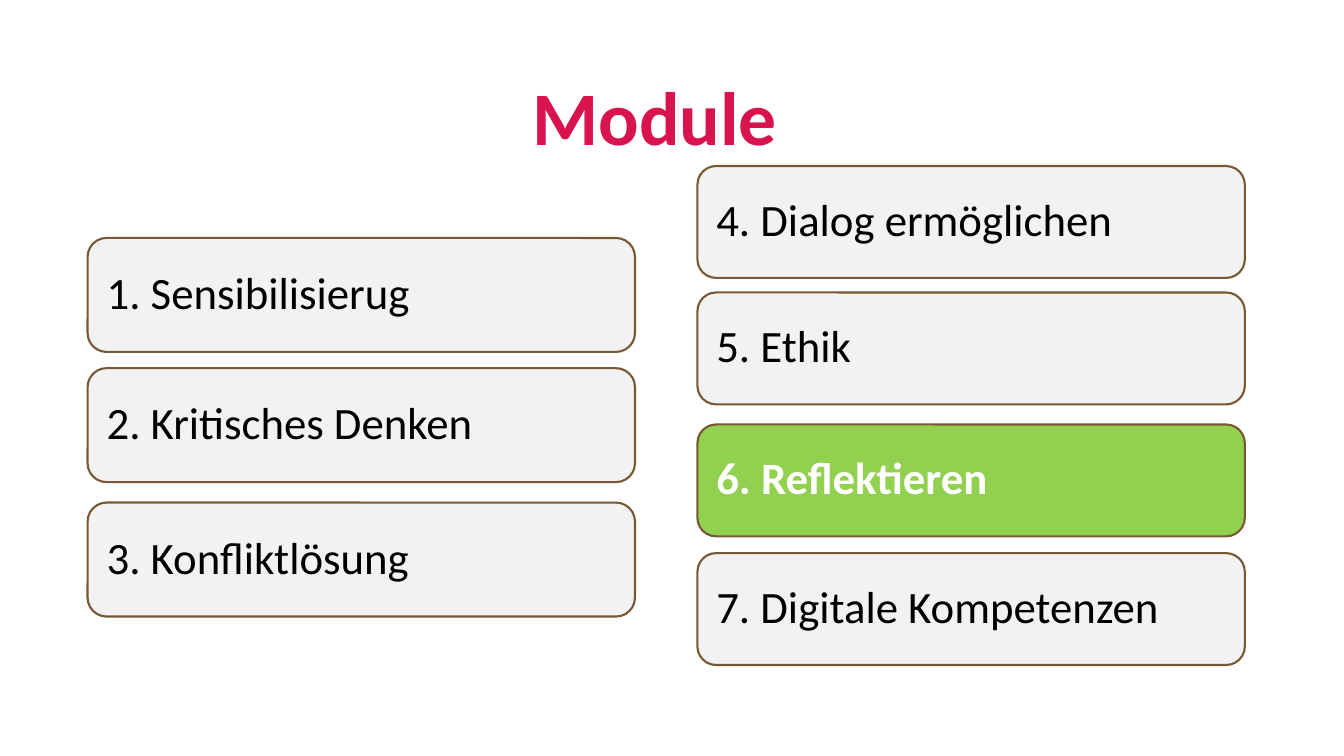
from dataclasses import dataclass

from pptx import Presentation
from pptx.dml.color import RGBColor
from pptx.enum.shapes import MSO_SHAPE
from pptx.enum.text import MSO_ANCHOR, PP_ALIGN
from pptx.util import Pt


@dataclass(frozen=True)
class Theme:
    font: str = "Calibri"
    title_size: int = 54
    module_size: int = 32
    line_width: float = 1.5
    line_spacing: float = 0.9
    inset: float = 9.6
    title: RGBColor = RGBColor(0xD8, 0x13, 0x4D)
    card: RGBColor = RGBColor(0xF2, 0xF2, 0xF2)
    active: RGBColor = RGBColor(0x92, 0xD0, 0x50)
    outline: RGBColor = RGBColor(0x78, 0x58, 0x32)
    text: RGBColor = RGBColor(0, 0, 0)
    active_text: RGBColor = RGBColor(0xFF, 0xFF, 0xFF)


THEME = Theme()
ACTIVE_MODULE = "6. Reflektieren"


def add_text(tf, text, size, color, bold, align, anchor):
    tf.word_wrap = True
    tf.vertical_anchor = anchor
    p = tf.paragraphs[0]
    p.alignment = align
    p.line_spacing = THEME.line_spacing
    r = p.add_run()
    r.text = text
    r.font.name = THEME.font
    r.font.size = Pt(size)
    r.font.bold = bold
    r.font.color.rgb = color


def add_title(s, text, left, top, width, height):
    sp = s.shapes.add_textbox(Pt(left), Pt(top), Pt(width), Pt(height))
    add_text(sp.text_frame, text, THEME.title_size, THEME.title, True,
             PP_ALIGN.CENTER, MSO_ANCHOR.BOTTOM)


def add_module(s, text, left, top, width, height):
    active = text == ACTIVE_MODULE
    sp = s.shapes.add_shape(MSO_SHAPE.ROUNDED_RECTANGLE,
                            Pt(left), Pt(top), Pt(width), Pt(height))
    sp.shadow.inherit = False
    sp.fill.solid()
    sp.fill.fore_color.rgb = THEME.active if active else THEME.card
    sp.line.color.rgb = THEME.outline
    sp.line.width = Pt(THEME.line_width)
    tf = sp.text_frame
    tf.margin_left = tf.margin_right = Pt(THEME.inset)
    tf.margin_top = tf.margin_bottom = Pt(THEME.inset)
    add_text(tf, text, THEME.module_size,
             THEME.active_text if active else THEME.text, active,
             PP_ALIGN.LEFT, MSO_ANCHOR.MIDDLE)


def add_module_column(s, modules, left, top, width, card_height):
    """Place each module at its offset below the top of the column."""
    for text, offset in modules:
        add_module(s, text, left, top + offset, width, card_height)


def main():
    prs = Presentation()
    prs.slide_width, prs.slide_height = Pt(960), Pt(540)
    s = prs.slides.add_slide(prs.slide_layouts[6])

    # Heading
    add_title(s, "Module", 0.7, -21.6, 934, 140.4)

    # Left column: modules 1 to 3
    add_module_column(s, [
        ("1. Sensibilisierug", 0),
        ("2. Kritisches Denken", 93),
        ("3. Konfliktlösung", 189),
    ], 62.6, 170, 391, 81.4)

    # Right column: modules 4 to 7
    add_module_column(s, [
        ("4. Dialog ermöglichen", 0),
        ("5. Ethik", 90.3),
        (ACTIVE_MODULE, 184.6),
        ("7. Digitale Kompetenzen", 276.5),
    ], 498.2, 118.6, 391, 79.9)

    prs.save("out.pptx")


if __name__ == "__main__":
    main()
